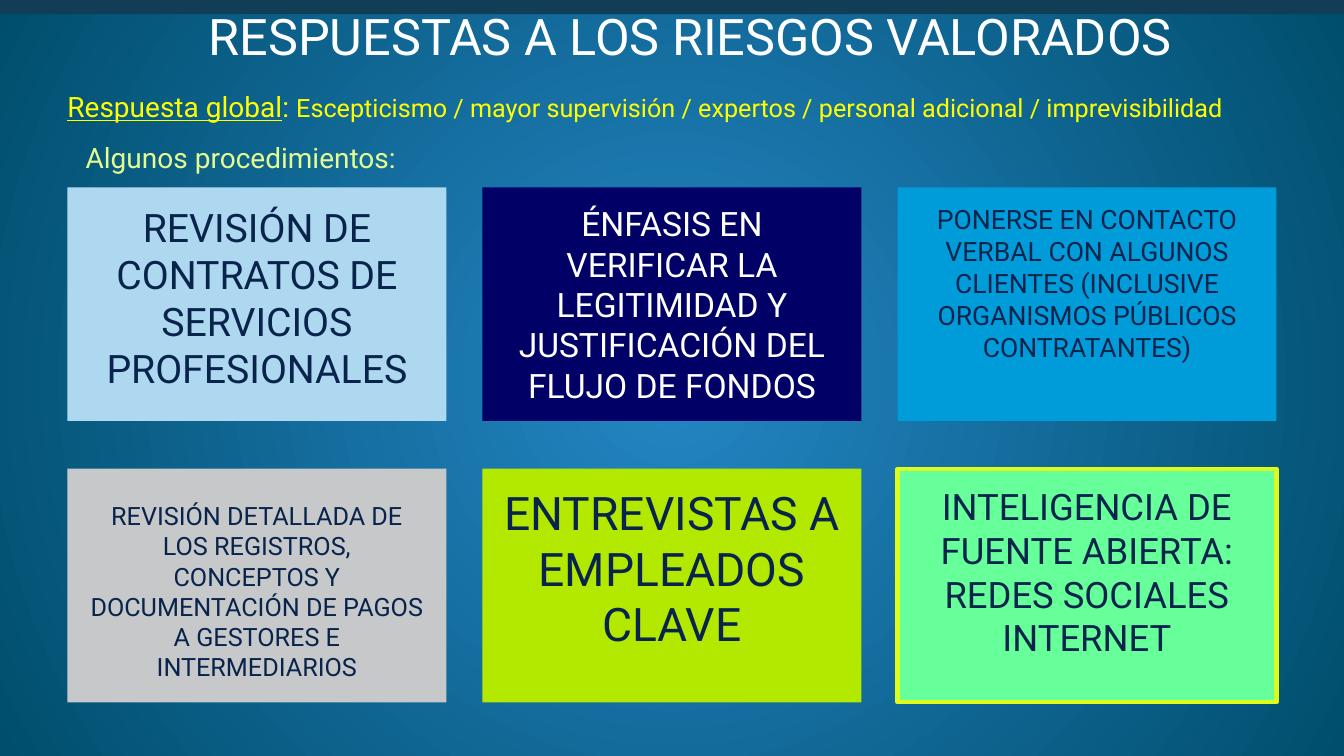
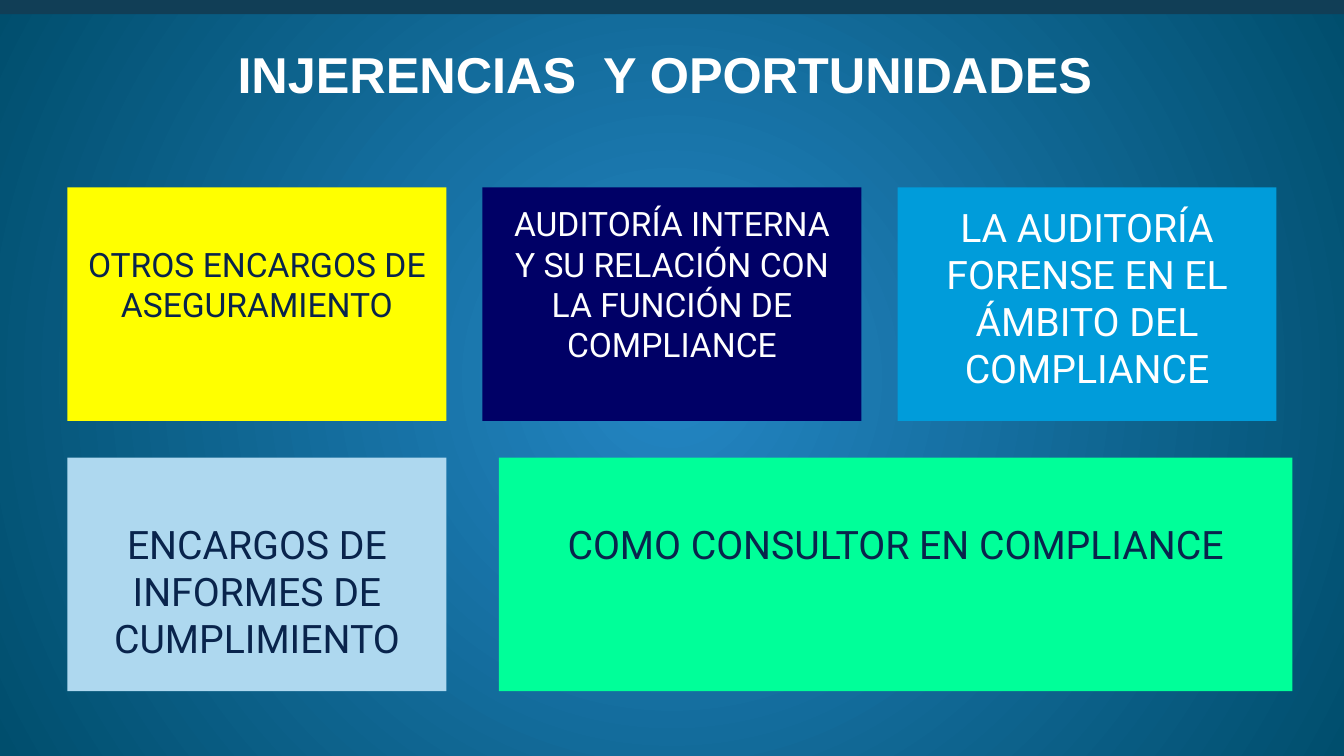
from lxml import etree
from pptx import Presentation
from pptx.dml.color import RGBColor
from pptx.enum.shapes import MSO_SHAPE as SHAPE
from pptx.enum.text import MSO_ANCHOR as ANCHOR, MSO_AUTO_SIZE as AUTO_SIZE, PP_ALIGN as ALIGN
from pptx.oxml.ns import qn
from pptx.util import Cm, Pt

FONT = "Roboto"
WHITE, INK, YELLOW, LIME = "FFFFFF", "09244C", "FFFF00", "E4FE90"
NAVY, BLUE, PALE = "000066", "009CDA", "AED8EF"
BAND, GLOW, EDGE = "113E56", "2486C4", "004E6D"

LEFT, STEP = 1.7, 10.46
CARD_W, CARD_H = 9.55, 5.89
TOP_ROW = 4.72
INSET_X, INSET_TOP, INSET_BOTTOM = 0.5, 0.4, 0.2


def rgb(value):
    return RGBColor.from_string(value)


class Deck:
    """Holds the shared style and the slide being filled."""

    def __init__(self):
        self.prs = Presentation()
        self.prs.slide_width, self.prs.slide_height = Cm(33.87), Cm(19.05)
        self.slide = None
        self.paint_background()

    def paint_background(self):
        """Give the master a gradient that spreads from the centre."""
        master = self.prs.slide_master
        fill = master.background.fill
        fill.gradient()
        for stop, color in zip(fill.gradient_stops, (GLOW, EDGE)):
            stop.color.rgb = rgb(color)
        grad = master.element.find(".//" + qn("p:bgPr")).find(qn("a:gradFill"))
        grad.remove(grad.find(qn("a:lin")))
        circle = etree.SubElement(grad, qn("a:path"), path="circle")
        etree.SubElement(circle, qn("a:fillToRect"),
                         **dict.fromkeys("ltrb", "50000"))

    def add_slide(self):
        self.slide = self.prs.slides.add_slide(self.prs.slide_layouts[5])

    def band(self):
        """Draw the top band and move it to the master, shared by all slides."""
        sp = self.rect(0, 0, 33.87, 0.36, BAND)
        self.prs.slide_master.shapes.element.insert(2, sp.element)

    def rect(self, x, y, w, h, fill):
        sp = self.slide.shapes.add_shape(SHAPE.RECTANGLE, Cm(x), Cm(y), Cm(w), Cm(h))
        sp.shadow.inherit = False
        sp.fill.solid()
        sp.fill.fore_color.rgb = rgb(fill)
        sp.line.fill.background()
        return sp

    def frame(self, sp, insets=(0, 0, 0, 0)):
        tf = sp.text_frame
        tf.word_wrap = True
        tf.auto_size = AUTO_SIZE.NONE
        tf.vertical_anchor = ANCHOR.TOP
        tf.margin_left, tf.margin_top, tf.margin_right, tf.margin_bottom = map(Cm, insets)
        return tf

    def style(self, r, size, color, font=FONT, bold=False, underline=False):
        r.font.name, r.font.size = font, Pt(size)
        r.font.color.rgb = rgb(color)
        r.font.bold, r.font.underline = bold, underline

    def title(self, text, x, y, font=FONT, bold=False):
        sp = self.slide.shapes.title
        sp.left, sp.top, sp.width, sp.height = Cm(x), Cm(y), Cm(30.48), Cm(1.45)
        p = self.frame(sp).paragraphs[0]
        p.text = text
        p.alignment = ALIGN.CENTER
        self.style(p.runs[0], 36, WHITE, font, bold)

    def caption(self, x, y, w, h, runs):
        """Write one line from (text, size, color, underline) runs."""
        sp = self.slide.shapes.add_textbox(Cm(x), Cm(y), Cm(w), Cm(h))
        p = self.frame(sp).paragraphs[0]
        for text, size, color, underline in runs:
            r = p.add_run()
            r.text = text
            self.style(r, size, color, underline=underline)

    def card(self, x, y, text, size, fill, color=INK, drop=0, w=CARD_W, outline=None):
        """Draw a filled card; drop lowers its text by that many centimetres."""
        sp = self.rect(x, y, w, CARD_H, fill)
        if outline:
            sp.line.color.rgb = rgb(outline)
            sp.line.width = Pt(3)
        tf = self.frame(sp, (INSET_X, INSET_TOP + drop, INSET_X, INSET_BOTTOM))
        p = tf.paragraphs[0]
        p.text = text
        p.alignment = ALIGN.CENTER
        self.style(p.runs[0], size, color)

    def row(self, y, cards):
        """Place cards on the column grid, from left to right."""
        for col, card in enumerate(cards):
            self.card(LEFT + col * STEP, y, **card)


def risk_responses(deck):
    deck.add_slide()
    deck.band()
    deck.title("RESPUESTAS A LOS RIESGOS VALORADOS", 2.16, 0.13)
    deck.caption(LEFT, 2.26, 30.91, 1.24, [
        ("Respuesta global", 20, YELLOW, True),
        (": ", 20, YELLOW, False),
        ("Escepticismo / mayor supervisión / expertos / personal adicional / imprevisibilidad",
         18, YELLOW, False),
    ])
    deck.caption(2.16, 3.53, 9.5, 0.74, [("Algunos procedimientos:", 20, LIME, False)])
    deck.row(TOP_ROW, [
        dict(text="REVISIÓN DE CONTRATOS DE SERVICIOS PROFESIONALES", size=28, fill=PALE),
        dict(text="ÉNFASIS EN VERIFICAR LA LEGITIMIDAD Y JUSTIFICACIÓN DEL FLUJO DE FONDOS",
             size=24, fill=NAVY, color=WHITE),
        dict(text="PONERSE EN CONTACTO VERBAL CON ALGUNOS CLIENTES "
                  "(INCLUSIVE ORGANISMOS PÚBLICOS CONTRATANTES)", size=19, fill=BLUE),
    ])
    deck.row(11.81, [
        dict(text="REVISIÓN DETALLADA DE LOS REGISTROS, CONCEPTOS Y DOCUMENTACIÓN "
                  "DE PAGOS A GESTORES E INTERMEDIARIOS", size=18, fill="C6C8CA", drop=0.4),
        dict(text="ENTREVISTAS A EMPLEADOS CLAVE", size=33, fill="B3E900"),
        dict(text="INTELIGENCIA DE FUENTE ABIERTA: REDES SOCIALES INTERNET",
             size=26, fill="66FF99", outline="DCFC1C"),
    ])


def opportunities(deck):
    bottom_row, drop = 11.53, 1.18
    deck.add_slide()
    deck.title("INJERENCIAS  Y OPORTUNIDADES", 1.52, 1.09, "Arial", True)
    deck.row(TOP_ROW, [
        dict(text="OTROS ENCARGOS DE ASEGURAMIENTO", size=24, fill=YELLOW, drop=1.02),
        dict(text="AUDITORÍA INTERNA Y SU RELACIÓN CON LA FUNCIÓN DE COMPLIANCE",
             size=24, fill=NAVY, color=WHITE),
        dict(text="LA AUDITORÍA FORENSE EN EL ÁMBITO DEL COMPLIANCE",
             size=28, fill=BLUE, color=WHITE),
    ])
    deck.card(LEFT, bottom_row, "ENCARGOS DE INFORMES DE CUMPLIMIENTO", 28, PALE, drop=drop)
    deck.card(12.57, bottom_row, "COMO CONSULTOR EN COMPLIANCE", 28, "00FF99",
              drop=drop, w=20)


def main():
    deck = Deck()
    risk_responses(deck)
    opportunities(deck)
    deck.prs.save("out.pptx")


if __name__ == "__main__":
    main()
